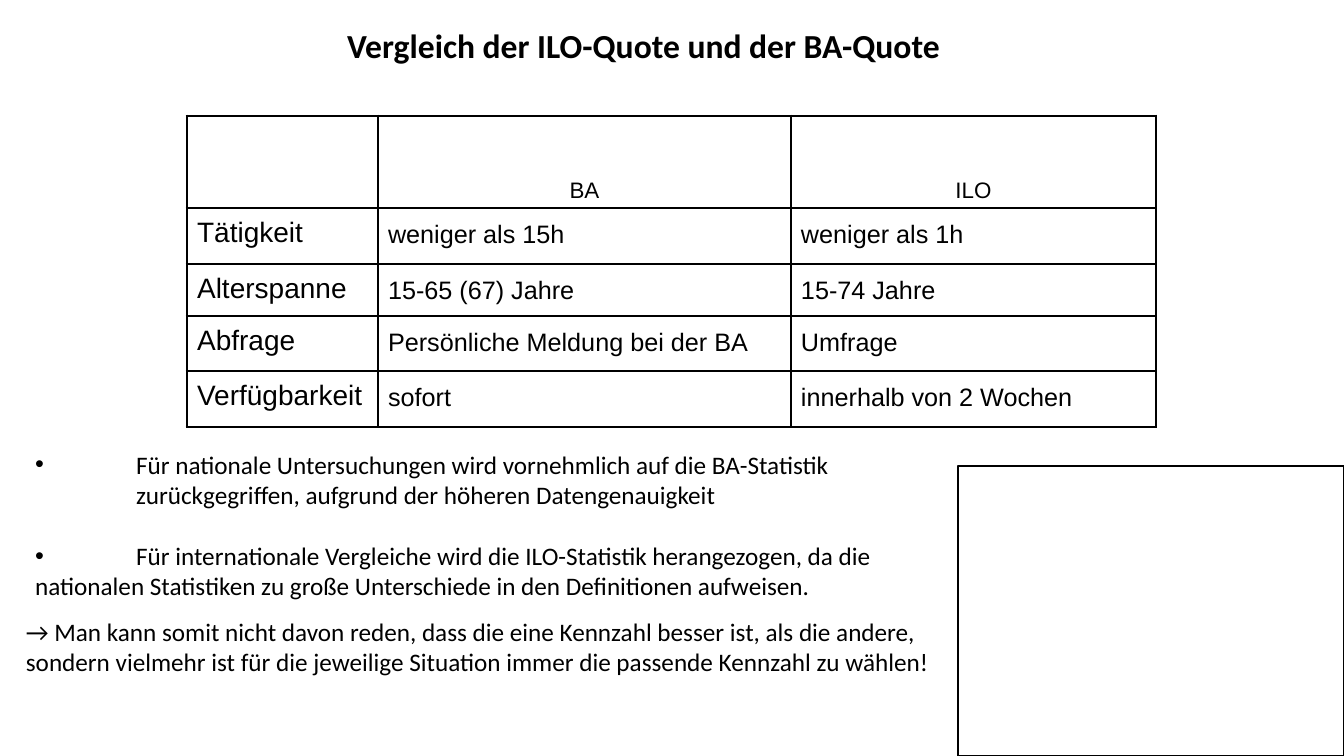
from lxml import etree
from pptx import Presentation
from pptx.dml.color import RGBColor
from pptx.enum.shapes import MSO_SHAPE
from pptx.enum.text import MSO_ANCHOR, MSO_AUTO_SIZE, PP_ALIGN
from pptx.oxml.ns import qn
from pptx.util import Pt

RECT = MSO_SHAPE.RECTANGLE
TOP, MID, LOW = MSO_ANCHOR.TOP, MSO_ANCHOR.MIDDLE, MSO_ANCHOR.BOTTOM
FIXED = MSO_AUTO_SIZE.NONE
LEFT, CENTER = PP_ALIGN.LEFT, PP_ALIGN.CENTER
WIDE, HIGH = 1344, 756
SCALE = 12192000 / WIDE
TAB = 101
BLACK = "000000"


def px(num):
    return round(num * SCALE)


def tint(code):
    return RGBColor.from_string(code)


def put(item, form):
    for key, value in form.items():
        setattr(item, key, value)


class Page:
    face = "Calibri"
    grid = "Arial"
    ink = BLACK
    thick, thin = 2.25, 1

    def __init__(self, deck):
        self.slide = deck.slides.add_slide(deck.slide_layouts[1])

    def place(self, shape, x, y, w, h):
        put(shape, dict(left=px(x), top=px(y), width=px(w), height=px(h)))

    def words(self, para, text, size, bold=False, face=None, **form):
        put(para, dict(alignment=LEFT, line_spacing=1.0) | form)
        run = para.add_run()
        run.text = text
        put(run.font, dict(name=face or self.face, size=Pt(size), bold=bold))
        run.font.color.rgb = tint(self.ink)

    def frame(self, shape, anchor):
        frame = shape.text_frame
        put(frame, dict(word_wrap=True, auto_size=FIXED, vertical_anchor=anchor))
        return frame

    def title(self, text, *box):
        shape = self.slide.shapes.title
        self.place(shape, *box)
        frame = self.frame(shape, MID)
        self.words(frame.paragraphs[0], text, 24, bold=True)

    def mark(self, para, hang):
        props = para._p.get_or_add_pPr()
        props.set("marL", str(px(hang)))
        props.set("indent", str(px(-hang)))
        etree.SubElement(props, qn("a:buFont"), typeface="Arial")
        etree.SubElement(props, qn("a:buChar"), char="•")
        tabs = etree.SubElement(props, qn("a:tabLst"))
        etree.SubElement(tabs, qn("a:tab"), pos=str(px(TAB)), algn="l")

    def points(self, items, *box):
        shape = self.slide.placeholders[1]
        self.place(shape, *box)
        frame = self.frame(shape, TOP)
        for num, (text, hang) in enumerate(items):
            para = frame.add_paragraph() if num else frame.paragraphs[0]
            self.mark(para, hang)
            self.words(para, text, 18, space_before=Pt(22 if num else 0))

    def note(self, text, *box):
        shape = self.slide.shapes.add_textbox(*map(px, box))
        self.words(self.frame(shape, TOP).paragraphs[0], text, 18)

    def edge(self, cell, side, width):
        props = cell._tc.get_or_add_tcPr()
        line = etree.SubElement(props, qn("a:" + side), w=str(Pt(width)))
        fill = etree.SubElement(line, qn("a:solidFill"))
        etree.SubElement(fill, qn("a:srgbClr"), val=self.ink)

    def table(self, data, cols, rows, x, y):
        box = map(px, (x, y, sum(cols), sum(rows)))
        table = self.slide.shapes.add_table(len(rows), len(cols), *box).table
        put(table, dict(first_row=False, horz_banding=False))
        for col, width in zip(table.columns, cols):
            col.width = px(width)
        for r, (high, texts) in enumerate(zip(rows, data)):
            table.rows[r].height = px(high)
            for c, text in enumerate(texts):
                cell = table.cell(r, c)
                outer = dict(lnL=c == 0, lnR=c == len(cols) - 1,
                             lnT=r == 0, lnB=r == len(rows) - 1)
                for side, bold in outer.items():
                    self.edge(cell, side, self.thick if bold else self.thin)
                cell.fill.background()
                cell.vertical_anchor = TOP if r else LOW
                size = 16 if r == 0 else 18 if c else 20
                self.words(cell.text_frame.paragraphs[0], text, size,
                           face=self.grid, line_spacing=Pt(25.6),
                           alignment=LEFT if r else CENTER)

    def rect(self, *box):
        shape = self.slide.shapes.add_shape(RECT, *map(px, box))
        shape.shadow.inherit = False
        shape.fill.background()
        shape.line.color.rgb = tint(self.ink)
        shape.line.width = Pt(self.thin)


def main():
    deck = Presentation()
    put(deck, dict(slide_width=px(WIDE), slide_height=px(HIGH)))
    page = Page(deck)
    page.title("Vergleich der ILO-Quote und der BA-Quote", 337, 20, 711, 51)
    page.table([
        ("", "BA", "ILO"),
        ("Tätigkeit", "weniger als 15h", "weniger als 1h"),
        ("Alterspanne", "15-65 (67) Jahre", "15-74 Jahre"),
        ("Abfrage", "Persönliche Meldung bei der BA", "Umfrage"),
        ("Verfügbarkeit", "sofort", "innerhalb von 2 Wochen"),
    ], (191, 413, 365), (92, 56, 52, 55, 56), 187, 116)
    page.points([
        ("Für nationale Untersuchungen wird vornehmlich auf die BA-Statistik "
         "zurückgegriffen, aufgrund der höheren Datengenauigkeit", TAB),
        ("\tFür internationale Vergleiche wird die ILO-Statistik herangezogen, "
         "da die nationalen Statistiken zu große Unterschiede in den "
         "Definitionen aufweisen.", 0),
    ], 25, 444, 905, 163)
    page.note("→ Man kann somit nicht davon reden, dass die eine Kennzahl besser "
              "ist, als die andere, sondern vielmehr ist für die jeweilige "
              "Situation immer die passende Kennzahl zu wählen!",
              16, 611, 941, 72)
    page.rect(958, 466, 386, 290)
    deck.save("out.pptx")


if __name__ == "__main__":
    main()
